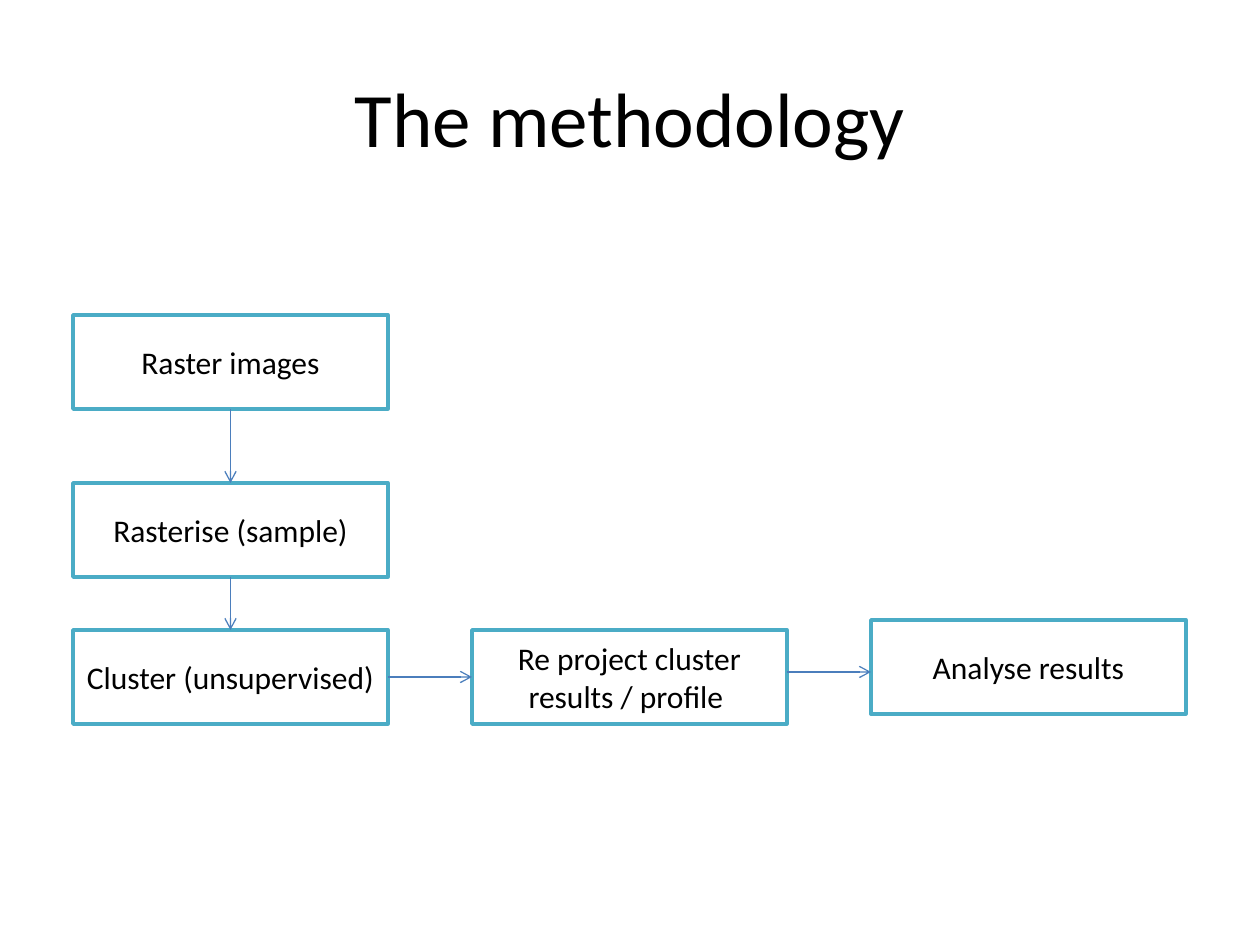
from dataclasses import dataclass

from lxml import etree
from pptx import Presentation
from pptx import util as u
from pptx.dml.color import RGBColor
from pptx.enum import shapes, text
from pptx.oxml.ns import qn

PX_PER_INCH = 126
TOP, LEFT, BOTTOM, RIGHT = range(4)


def px(length):
    return round(length * u.Inches(1) / PX_PER_INCH)


@dataclass(frozen=True)
class Theme:
    font: str = "Calibri"
    title_size: int = 44
    step_size: int = 18
    ink: str = "000000"
    paper: str = "FFFFFF"
    border: str = "4BACC6"
    arrow: str = "4B7EBC"
    border_width: float = 2
    arrow_width: float = 0.75


class FlowSlide:
    def __init__(self, deck, theme):
        self.theme = theme
        self.page = deck.slides.add_slide(deck.slide_layouts[6])

    def label(self, box, words, size):
        """Put centred text in the middle of a box."""
        frame = box.text_frame
        frame.word_wrap = True
        frame.vertical_anchor = text.MSO_ANCHOR.MIDDLE
        para = frame.paragraphs[0]
        para.alignment = text.PP_ALIGN.CENTER
        span = para.add_run()
        span.text = words
        span.font.name = self.theme.font
        span.font.size = u.Pt(size)
        span.font.color.rgb = RGBColor.from_string(self.theme.ink)

    def title(self, words, left, top, width, height):
        box = self.page.shapes.add_textbox(px(left), px(top), px(width), px(height))
        self.label(box, words, self.theme.title_size)

    def step(self, words, left, top, width, height):
        box = self.page.shapes.add_shape(
            shapes.MSO_SHAPE.RECTANGLE, px(left), px(top), px(width), px(height))
        box.shadow.inherit = False
        box.fill.solid()
        box.fill.fore_color.rgb = RGBColor.from_string(self.theme.paper)
        box.line.color.rgb = RGBColor.from_string(self.theme.border)
        box.line.width = u.Pt(self.theme.border_width)
        self.label(box, words, self.theme.step_size)
        return box

    def arrow(self, x1=0, y1=0, x2=0, y2=0):
        line = self.page.shapes.add_connector(
            shapes.MSO_CONNECTOR.STRAIGHT, px(x1), px(y1), px(x2), px(y2))
        line.line.color.rgb = RGBColor.from_string(self.theme.arrow)
        line.line.width = u.Pt(self.theme.arrow_width)
        outline = line._element.spPr.find(qn("a:ln"))
        etree.SubElement(outline, qn("a:tailEnd"), type="arrow")
        etree.SubElement(line._element.spPr, qn("a:effectLst"))
        return line

    def join(self, start, start_side, end, end_side):
        line = self.arrow()
        line.begin_connect(start, start_side)
        line.end_connect(end, end_side)


def main():
    deck = Presentation()
    deck.slide_width, deck.slide_height = px(1260), px(945)
    slide = FlowSlide(deck, Theme())
    slide.title("The methodology", 63, 38, 1134, 157)

    width, height = 315, 94
    columns = [73 + 399 * index for index in range(3)]
    steps = [
        ("Raster images", columns[0], 315),
        ("Rasterise (sample)", columns[0], 483),
        ("Cluster (unsupervised)", columns[0], 630),
        ("Re project cluster results / profile ", columns[1], 630),
        ("Analyse results", columns[2], 620),
    ]
    images, sample, cluster, project, _ = [
        slide.step(words, left, top, width, height) for words, left, top in steps]

    slide.join(images, BOTTOM, sample, TOP)
    slide.join(sample, BOTTOM, cluster, TOP)
    slide.join(cluster, RIGHT, project, LEFT)
    slide.arrow(columns[1] + width, 672, columns[2], 672)
    deck.save("out.pptx")


if __name__ == "__main__":
    main()
